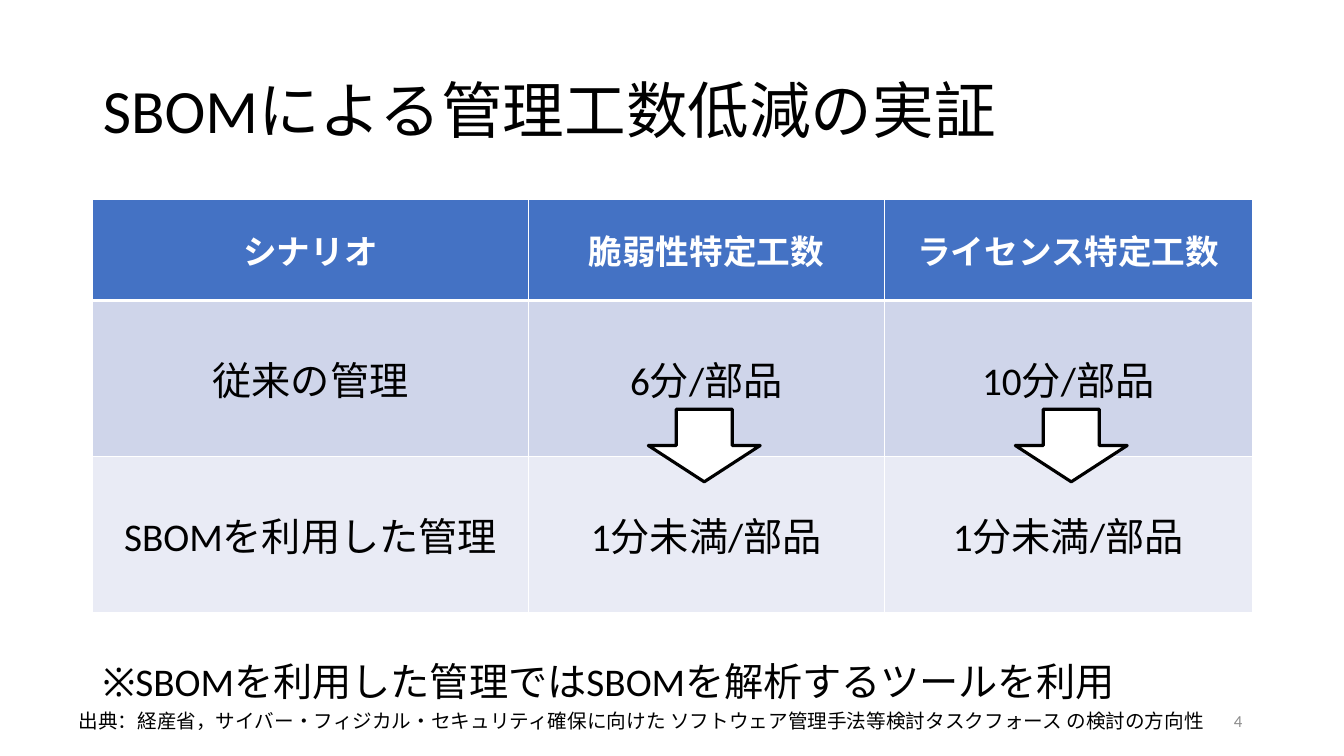
"""Build the slide on how an SBOM cuts management effort."""
from dataclasses import dataclass

from lxml import etree
from pptx import Presentation
from pptx import util as u
from pptx.dml import color
from pptx.enum import shapes, text
from pptx.oxml import ns

FONT = "Calibri"
BLACK, WHITE, GREY = "000000", "FFFFFF", "8C8C8C"
LEFT, TOP, WIDTH = 0.92, 1.98, 11.5
COLS = (4.32, 3.53, 3.65)
ALIGN = text.PP_ALIGN


@dataclass
class Row:
    """One table row with its look."""
    cells: tuple[str, ...]
    high: float
    fill: str
    ink: str = BLACK
    size: int = 28
    bold: bool = False
    edge: float = 1


@dataclass
class Label:
    """A line of text in its own box."""
    words: str
    left: float
    top: float
    width: float
    high: float
    size: int
    ink: str = BLACK
    align: ALIGN = ALIGN.LEFT
    wrap: bool = True
    space: float = 1.0


ROWS = (
    Row(("シナリオ", "脆弱性特定工数", "ライセンス特定工数"), 1, "4472C4", WHITE, 24, True, 3),
    Row(("従来の管理", "6分/部品", "10分/部品"), 1.55, "CFD5EA"),
    Row(("SBOMを利用した管理", "1分未満/部品", "1分未満/部品"), 1.55, "E9EBF5"),
)
TITLE = Label("SBOMによる管理工数低減の実証", LEFT, 0.4, WIDTH, 1.45, 44, space=0.9)
LABELS = (
    Label("※SBOMを利用した管理ではSBOMを解析するツールを利用", LEFT, 6.48, WIDTH, 0.6, 28, space=0.9),
    Label("4", 9.42, 6.95, 3, 0.4, 12, GREY, ALIGN.RIGHT),
    Label("出典：経産省，サイバー・フィジカル・セキュリティ確保に向けた "
          "ソフトウェア管理手法等検討タスクフォース の検討の方向性",
          0.68, 6.98, 11.51, 0.34, 14, wrap=False),
)
ARROWS = (6.43, 10.07)


def rgb(code: str) -> color.RGBColor:
    """Turn a hex string into a colour."""
    return color.RGBColor.from_string(code)


def style(frame, size: int, ink: str, align: ALIGN, bold: bool = False, space: float = 1.0) -> None:
    """Format every paragraph and run of a text frame."""
    for para in frame.paragraphs:
        para.alignment = align
        para.line_spacing = space
        for run in para.runs:
            run.font.name = FONT
            run.font.size = u.Pt(size)
            run.font.bold = bold
            run.font.color.rgb = rgb(ink)


def write(box, label: Label) -> None:
    """Place a text shape and fill it with its label."""
    box.left, box.top = u.Inches(label.left), u.Inches(label.top)
    box.width, box.height = u.Inches(label.width), u.Inches(label.high)
    frame = box.text_frame
    frame.text = label.words
    frame.auto_size = text.MSO_AUTO_SIZE.NONE
    frame.word_wrap = label.wrap
    frame.vertical_anchor = text.MSO_ANCHOR.MIDDLE
    style(frame, label.size, label.ink, label.align, space=label.space)


def border(cell, top: float, base: float) -> None:
    """Give a cell white edges of the given widths in points."""
    props = cell._tc.get_or_add_tcPr()
    for side, width in (("L", 1), ("R", 1), ("T", top), ("B", base)):
        line = etree.SubElement(props, ns.qn(f"a:ln{side}"), w=str(u.Pt(width)))
        fill = etree.SubElement(line, ns.qn("a:solidFill"))
        etree.SubElement(fill, ns.qn("a:srgbClr"), val=WHITE)


def grid(slide) -> None:
    """Draw the table of scenarios and efforts."""
    high = sum(row.high for row in ROWS)
    table = slide.shapes.add_table(len(ROWS), len(COLS), u.Inches(LEFT), u.Inches(TOP),
                                   u.Inches(WIDTH), u.Inches(high)).table
    for col, width in zip(table.columns, COLS):
        col.width = u.Inches(width)
    above = 1
    for i, row in enumerate(ROWS):
        table.rows[i].height = u.Inches(row.high)
        for cell, words in zip(table.rows[i].cells, row.cells):
            cell.text_frame.text = words
            cell.vertical_anchor = text.MSO_ANCHOR.MIDDLE
            style(cell.text_frame, row.size, row.ink, ALIGN.CENTER, row.bold)
            border(cell, above, row.edge)
            cell.fill.solid()
            cell.fill.fore_color.rgb = rgb(row.fill)
        above = row.edge


def arrow(slide, left: float) -> None:
    """Draw a white arrow that points from the old effort to the new."""
    shape = slide.shapes.add_shape(shapes.MSO_SHAPE.DOWN_ARROW, u.Inches(left),
                                   u.Inches(4.06), u.Inches(1.11), u.Inches(0.72))
    shape.shadow.inherit = False
    shape.fill.solid()
    shape.fill.fore_color.rgb = rgb(WHITE)
    shape.line.color.rgb = rgb(BLACK)
    shape.line.width = u.Pt(2.25)


def main() -> None:
    """Build and save the slide."""
    deck = Presentation()
    deck.slide_width, deck.slide_height = u.Inches(13.33), u.Inches(7.5)
    slide = deck.slides.add_slide(deck.slide_layouts[5])
    write(slide.shapes.title, TITLE)
    for label in LABELS:
        write(slide.shapes.add_textbox(0, 0, 0, 0), label)
    grid(slide)
    for left in ARROWS:
        arrow(slide, left)
    deck.save("out.pptx")


if __name__ == "__main__":
    main()
